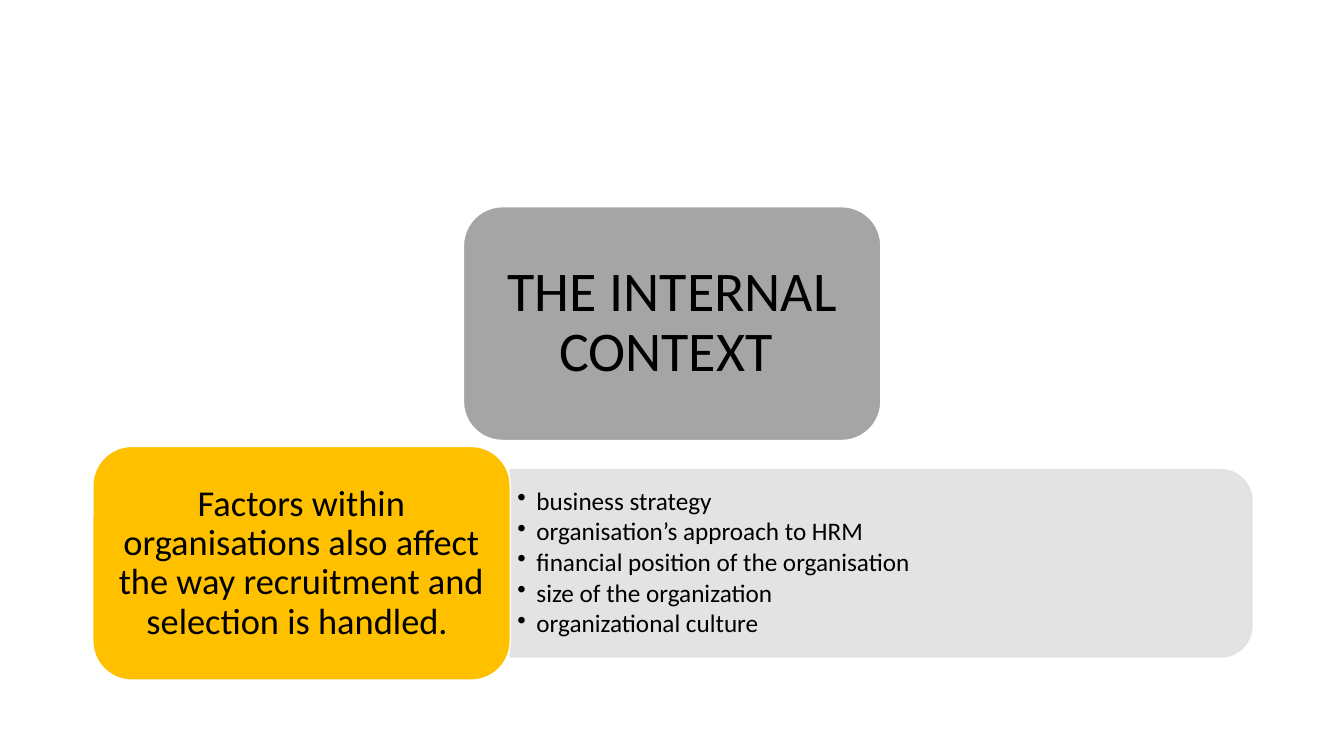
"""Build the slide on the internal context of recruitment and selection."""
from lxml import etree
from pptx import Presentation
from pptx.dml.color import RGBColor
from pptx.enum.shapes import MSO_SHAPE
from pptx.enum.text import MSO_ANCHOR, PP_ALIGN
from pptx.oxml.ns import qn
from pptx.util import Cm, Pt

ROUNDED = MSO_SHAPE.ROUNDED_RECTANGLE
ROUNDED_TOP = MSO_SHAPE.ROUND_2_SAME_RECTANGLE
MIDDLE = MSO_ANCHOR.MIDDLE
CENTER, LEFT = PP_ALIGN.CENTER, PP_ALIGN.LEFT

COLORS = {"heading": "A5A5A5", "factors": "FFC000", "panel": "E1E1E1",
          "outline": "FFFFFF", "text": "000000"}
FONT = "Calibri"
CARDS = [
    {"text": "THE INTERNAL CONTEXT ", "color": "heading", "left": 11.68,
     "top": 5.21, "size": 40, "inset": 0.42},
    {"text": "Factors within organisations also affect the way recruitment "
             "and selection is handled. ", "color": "factors", "left": 2.34,
     "top": 11.25, "size": 26, "inset": 0.28},
]
FACTORS = [
    "business strategy",
    "organisation’s approach to HRM",
    "financial position of the organisation",
    "size of the organization",
    "organizational culture",
]
CARD_WIDTH, CARD_HEIGHT = 10.52, 5.89
PANEL_WIDTH, PANEL_HEIGHT = 18.69, 4.72
LIST_WIDTH, LIST_HEIGHT = 18.47, 4.27
BULLET_INDENT = 0.48


def rgb(name):
    return RGBColor.from_string(COLORS[name])


def paint(shape, fill, outline):
    shape.shadow.inherit = False
    shape.fill.solid()
    shape.fill.fore_color.rgb = rgb(fill)
    shape.line.color.rgb = rgb(outline)
    shape.line.width = Pt(1)


def format_text(text_frame, size, inset, alignment, space_after):
    text_frame.word_wrap = True
    text_frame.vertical_anchor = MIDDLE
    text_frame.margin_left = text_frame.margin_right = Cm(inset)
    text_frame.margin_top = text_frame.margin_bottom = Cm(inset / 2)
    for paragraph in text_frame.paragraphs:
        paragraph.alignment = alignment
        paragraph.line_spacing = 0.9
        paragraph.space_after = Pt(space_after)
        for run in paragraph.runs:
            run.font.name = FONT
            run.font.size = Pt(size)
            run.font.color.rgb = rgb("text")


def add_card(slide, card):
    shape = slide.shapes.add_shape(ROUNDED, Cm(card["left"]), Cm(card["top"]),
                                   Cm(CARD_WIDTH), Cm(CARD_HEIGHT))
    paint(shape, card["color"], "outline")
    shape.text_frame.text = card["text"]
    format_text(shape.text_frame, card["size"], card["inset"], CENTER, 0)


def add_panel(slide, left, middle):
    center = left + PANEL_WIDTH / 2
    shape = slide.shapes.add_shape(
        ROUNDED_TOP, Cm(center - PANEL_HEIGHT / 2), Cm(middle - PANEL_WIDTH / 2),
        Cm(PANEL_HEIGHT), Cm(PANEL_WIDTH))
    shape.rotation = 90
    paint(shape, "panel", "panel")
    for color in shape._element.spPr.iter(qn("a:srgbClr")):
        etree.SubElement(color, qn("a:alpha"), val="90000")


def add_factor_list(slide, left, middle):
    box = slide.shapes.add_textbox(Cm(left), Cm(middle - LIST_HEIGHT / 2),
                                   Cm(LIST_WIDTH), Cm(LIST_HEIGHT))
    text_frame = box.text_frame
    text_frame.text = "\n".join(FACTORS)
    for paragraph in text_frame.paragraphs:
        properties = paragraph._p.get_or_add_pPr()
        properties.set("marL", str(Cm(BULLET_INDENT)))
        properties.set("indent", str(-Cm(BULLET_INDENT)))
        etree.SubElement(properties, qn("a:buChar"), char="•")
    format_text(text_frame, 18, 0.18, LEFT, 2.5)


def main():
    presentation = Presentation()
    presentation.slide_width, presentation.slide_height = Cm(33.87), Cm(19.05)
    slide = presentation.slides.add_slide(presentation.slide_layouts[6])
    heading, factors = CARDS
    panel_left = factors["left"] + CARD_WIDTH
    panel_middle = factors["top"] + CARD_HEIGHT / 2
    add_card(slide, heading)
    add_panel(slide, panel_left, panel_middle)
    add_factor_list(slide, panel_left, panel_middle)
    add_card(slide, factors)
    presentation.save("out.pptx")


if __name__ == "__main__":
    main()
